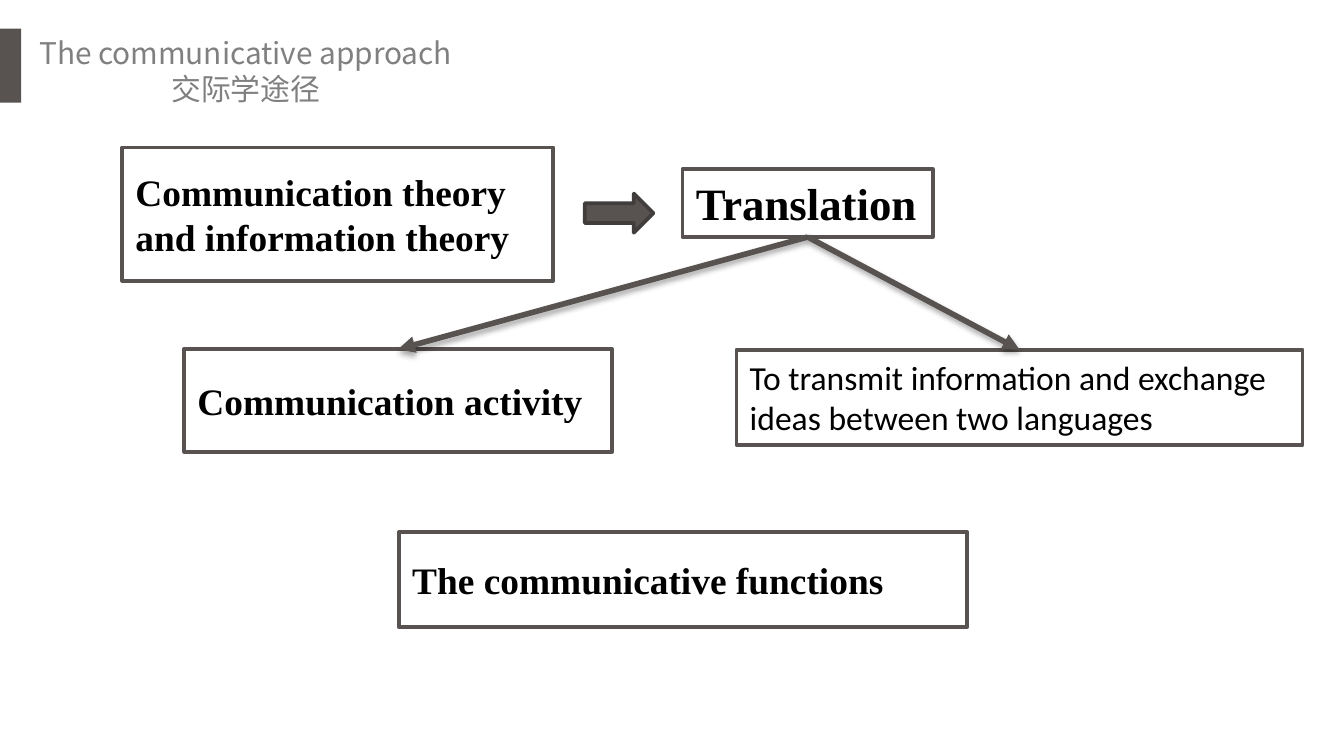
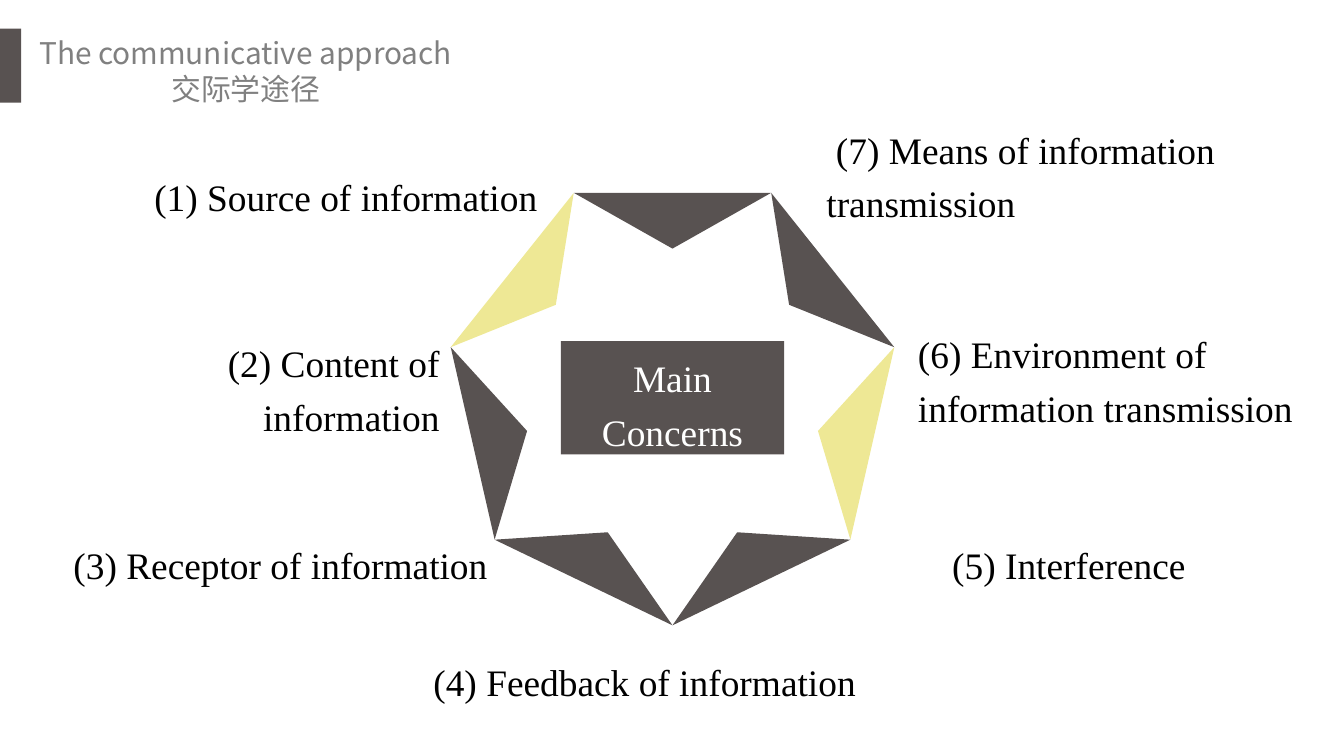
"""Builds two slides on the communicative approach to translation."""
from math import cos, pi, sin

from lxml import etree
from pptx import Presentation
from pptx.dml.color import RGBColor
from pptx.enum.shapes import MSO_CONNECTOR, MSO_SHAPE
from pptx.enum.text import MSO_ANCHOR, MSO_AUTO_SIZE, PP_ALIGN
from pptx.oxml import parse_xml
from pptx.oxml.ns import nsdecls, qn
from pptx.util import Cm, Pt

RECT, ARROW = MSO_SHAPE.RECTANGLE, MSO_SHAPE.RIGHT_ARROW
STRAIGHT = MSO_CONNECTOR.STRAIGHT
TOP, MIDDLE = MSO_ANCHOR.TOP, MSO_ANCHOR.MIDDLE
LEFT, CENTER, RIGHT = PP_ALIGN.LEFT, PP_ALIGN.CENTER, PP_ALIGN.RIGHT
GROW, FIXED = MSO_AUTO_SIZE.SHAPE_TO_FIT_TEXT, MSO_AUTO_SIZE.NONE

COLORS = {
    "dark": "585251", "edge": "413D3C", "yellow": "EEE895",
    "gray": "808080", "black": "000000", "white": "FFFFFF",
}
SERIF, SANS, CJK = "Times New Roman", "Calibri", "Noto Sans CJK SC"
SHADOW = (
    f'<a:effectLst {nsdecls("a")}>'
    '<a:outerShdw blurRad="40000" dist="23000" dir="5400000" rotWithShape="0">'
    '<a:srgbClr val="000000"><a:alpha val="35000"/></a:srgbClr>'
    '</a:outerShdw></a:effectLst>'
)


def color(name):
    return RGBColor.from_string(COLORS[name])


class Deck:
    """Holds the shared style and the current slide."""

    def __init__(self):
        self.prs = Presentation()
        self.prs.slide_width, self.prs.slide_height = Cm(25.4), Cm(14.29)
        self.slide = None

    def start(self, title):
        self.slide = self.prs.slides.add_slide(self.prs.slide_layouts[6])
        self.block((0, 0.54, 0.4, 1.4), "dark")
        self.label((0.43, 0.56, 8.43, 1.55), title, align=CENTER, size=16,
                   face=CJK, ink="gray", wrap=False, lead=None)

    def paint(self, shape, fill, line=None):
        shape.shadow.inherit = False
        shape.fill.solid()
        shape.fill.fore_color.rgb = color(fill)
        if line:
            shape.line.color.rgb = color(line)
            shape.line.width = Pt(2)
        else:
            shape.line.fill.background()

    def block(self, at, fill, line=None, kind=RECT):
        shape = self.slide.shapes.add_shape(kind, *map(Cm, at))
        self.paint(shape, fill, line)
        return shape

    def letter(self, shape, text, size=20, face=SERIF, ink="black", bold=False,
               align=LEFT, anchor=TOP, wrap=True, fit=GROW, lead=None,
               inset=(0.25, 0.13), indent=0):
        frame = shape.text_frame
        frame.text = text
        frame.word_wrap = wrap
        frame.auto_size = fit
        frame.vertical_anchor = anchor
        frame.margin_left = frame.margin_right = Cm(inset[0])
        frame.margin_top = frame.margin_bottom = Cm(inset[1])
        for para in frame.paragraphs:
            para.alignment = align
            if lead:
                para.line_spacing = lead
            if indent:
                para._p.get_or_add_pPr().set("indent", str(Cm(indent)))
            for run in para.runs:
                font = run.font
                font.name, font.size, font.bold = face, Pt(size), bold
                font.color.rgb = color(ink)
                east = etree.SubElement(run._r.get_or_add_rPr(), qn("a:ea"))
                east.set("typeface", face)

    def label(self, at, text, align=LEFT, lead=1.2, **style):
        shape = self.slide.shapes.add_textbox(*map(Cm, at))
        self.letter(shape, text, align=align, lead=lead, inset=(0.2, 0.1), **style)

    def frame(self, at, text, **style):
        shape = self.block(at, "white", "dark")
        self.letter(shape, text, **style)
        return shape

    def link(self, start, end):
        line = self.slide.shapes.add_connector(STRAIGHT, 0, 0, 0, 0)
        line.begin_connect(start, 2)
        line.end_connect(end, 0)
        line.line.color.rgb = color("dark")
        line.line.width = Pt(3)
        tail = etree.SubElement(line.line._get_or_add_ln(), qn("a:tailEnd"))
        tail.set("type", "triangle")
        line._element.spPr.append(parse_xml(SHADOW))

    def ring(self, mid, outer, inner, fills):
        group = self.slide.shapes.add_group_shape()
        step = 2 * pi / len(fills)

        def spot(radius, turn):
            angle = turn * step - pi / 2
            return (Cm(mid[0] + radius * cos(angle)),
                    Cm(mid[1] + radius * sin(angle)))

        for i, fill in enumerate(fills):
            petal = group.shapes.build_freeform(*spot(outer, i - 0.5))
            petal.add_line_segments([spot(outer, i + 0.5), spot(inner, i)])
            self.paint(petal.convert_to_shape(), fill)


def main():
    deck = Deck()
    title = "The communicative approach\n交际学途径"

    deck.start(title)
    strong = {"bold": True, "anchor": MIDDLE, "fit": FIXED}
    deck.frame((2.31, 2.79, 8.15, 2.52),
               "Communication theory and information theory", **strong)
    act = deck.frame((3.48, 6.6, 8.09, 1.94), "Communication activity", **strong)
    deck.frame((7.54, 10.06, 10.74, 1.8), "The communicative functions", **strong)
    goal = deck.frame(
        (13.92, 6.61, 10.7, 1.8),
        "To transmit information and exchange ideas between two languages",
        size=18, face=SANS)
    root = deck.frame((12.9, 3.2, 4.73, 1.28), "Translation",
                      size=24, bold=True, wrap=False)
    deck.block((11.05, 3.66, 1.3, 0.74), "dark", "edge", ARROW)
    for end in (act, goal):
        deck.link(root, end)

    deck.start(title)
    deck.ring((12.71, 7.52), 4.3, 2.82,
              ["dark", "dark", "yellow", "dark", "dark", "dark", "yellow"])
    core = deck.block((10.6, 6.45, 4.22, 2.14), "dark")
    deck.letter(core, "Main Concerns", ink="white", align=CENTER, lead=1.2,
                inset=(0.18, 0.1))
    for at, text, align in (
        ((2.21, 3.02, 8.15, 1.12), "(1) Source of information", RIGHT),
        ((0.79, 6.17, 7.72, 2.16), "(2) Content of information", RIGHT),
        ((0, 9.98, 9.42, 1.12), "(3) Receptor of information", RIGHT),
        ((7.19, 12.19, 9.19, 1.12), "(4) Feedback of information", RIGHT),
        ((16.08, 9.98, 6.53, 1.12), "(5) Interference", RIGHT),
        ((17.15, 5.99, 8.13, 2.16),
         "(6) Environment of information transmission", LEFT),
    ):
        deck.label(at, text, align)
    deck.label((15.42, 2.13, 7.77, 2.16),
               "(7) Means of information transmission", indent=0.18)

    deck.prs.save("out.pptx")


if __name__ == "__main__":
    main()
